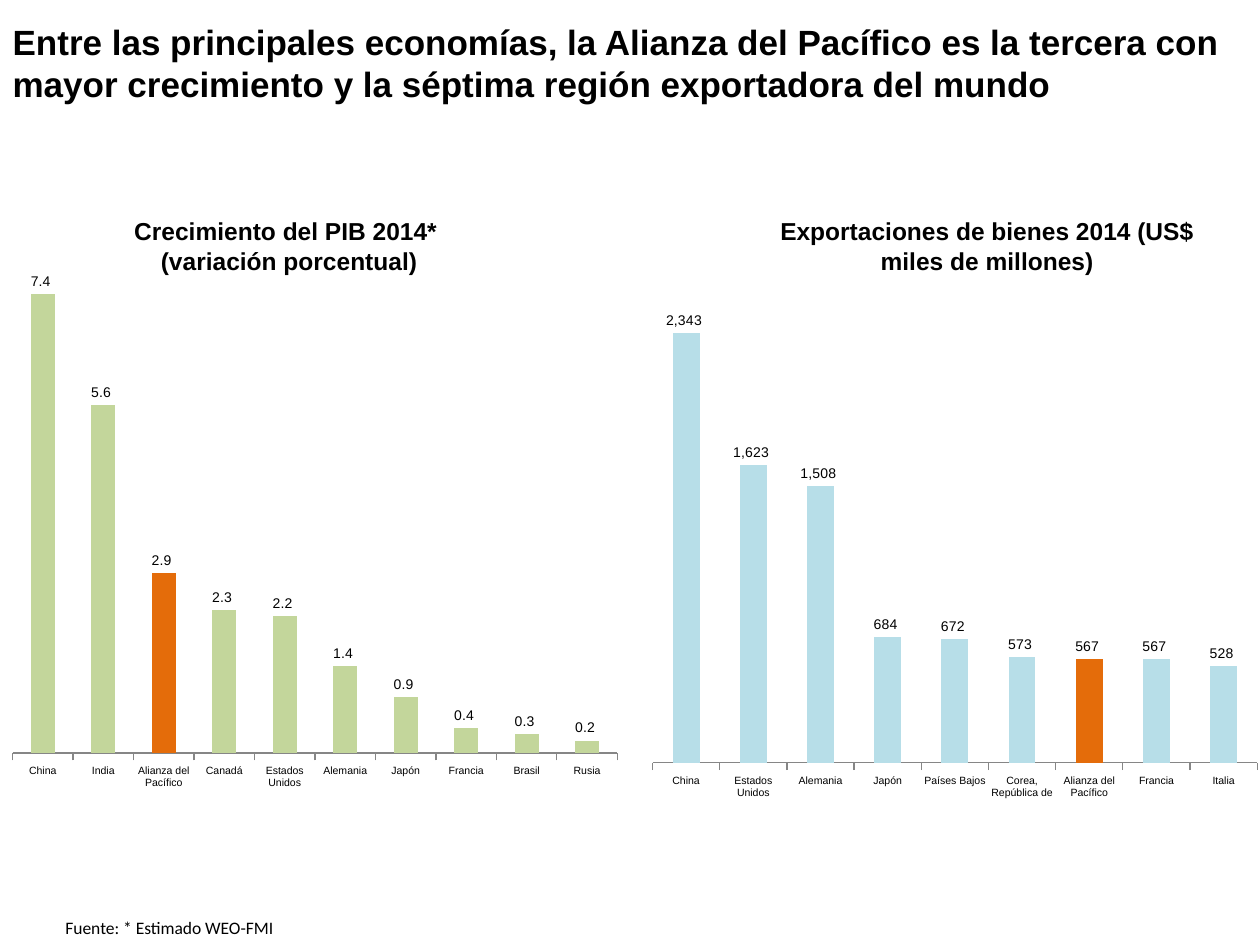
from dataclasses import dataclass

from pptx import Presentation
from pptx.chart.data import CategoryChartData
from pptx.dml.color import RGBColor
from pptx.enum.chart import XL_CHART_TYPE, XL_LABEL_POSITION, XL_TICK_LABEL_POSITION, XL_TICK_MARK
from pptx.enum.text import MSO_ANCHOR, MSO_AUTO_SIZE, PP_ALIGN
from pptx.util import Cm, Pt


@dataclass(frozen=True)
class Theme:
    font: str = "Arial"
    source_font: str = "Calibri"
    text: RGBColor = RGBColor(0x00, 0x00, 0x00)
    axis: RGBColor = RGBColor(0x86, 0x86, 0x86)
    growth: RGBColor = RGBColor(0xC3, 0xD6, 0x9B)
    exports: RGBColor = RGBColor(0xB7, 0xDE, 0xE8)
    highlight: RGBColor = RGBColor(0xE4, 0x6C, 0x0A)
    title_size: int = 20
    heading_size: int = 14
    source_size: int = 10
    label_size: int = 8
    category_size: int = 6


THEME = Theme()
HIGHLIGHTED = "Alianza del Pacífico"


@dataclass(frozen=True)
class Box:
    left: float
    top: float
    width: float
    height: float

    def lengths(self) -> tuple:
        return Cm(self.left), Cm(self.top), Cm(self.width), Cm(self.height)


@dataclass(frozen=True)
class Panel:
    heading: str
    heading_box: Box
    chart_box: Box
    values: dict[str, float]
    color: RGBColor
    number_format: str
    maximum: float


PANELS = (
    Panel(
        "Crecimiento del PIB 2014* \n(variación porcentual)",
        Box(0.84, 4.52, 9.98, 0.86),
        Box(0, 4.95, 12.7, 11.18),
        {"China": 7.4, "India": 5.6, HIGHLIGHTED: 2.9, "Canadá": 2.3,
         "Estados Unidos": 2.2, "Alemania": 1.4, "Japón": 0.9,
         "Francia": 0.4, "Brasil": 0.3, "Rusia": 0.2},
        THEME.growth, r"#,##0.0_);\(#,##0.0\)", 8,
    ),
    Panel(
        "Exportaciones de bienes 2014 (US$ miles de millones)",
        Box(14.91, 4.52, 9.98, 0.86),
        Box(12.9, 5.92, 12.7, 10.39),
        {"China": 2343, "Estados Unidos": 1623, "Alemania": 1508,
         "Japón": 684, "Países Bajos": 672, "Corea, República de": 573,
         HIGHLIGHTED: 567, "Francia": 567, "Italia": 528},
        THEME.exports, r"#,##0_);\(#,##0\)", 2500,
    ),
)


def write_text(shape, text: str, *, size: int, font: str = THEME.font, bold: bool = False,
               align=PP_ALIGN.LEFT, anchor=MSO_ANCHOR.TOP, wrap: bool = True,
               auto_size=MSO_AUTO_SIZE.NONE) -> None:
    frame = shape.text_frame
    frame.text = text
    frame.word_wrap = wrap
    frame.auto_size = auto_size
    frame.vertical_anchor = anchor
    for paragraph in frame.paragraphs:
        paragraph.alignment = align
        for run in paragraph.runs:
            run.font.name = font
            run.font.size = Pt(size)
            run.font.bold = bold
            run.font.color.rgb = THEME.text


def fill_solid(element, color: RGBColor) -> None:
    element.format.fill.solid()
    element.format.fill.fore_color.rgb = color


def add_column_chart(slide, panel: Panel) -> None:
    data = CategoryChartData(number_format=panel.number_format)
    data.categories = list(panel.values)
    data.add_series("Series 1", list(panel.values.values()))
    chart = slide.shapes.add_chart(
        XL_CHART_TYPE.COLUMN_CLUSTERED, *panel.chart_box.lengths(), data).chart
    chart.has_legend = False
    chart.has_title = False
    chart.font.name = THEME.font
    chart.font.size = Pt(18)
    chart.font.color.rgb = THEME.text

    value_axis = chart.value_axis
    value_axis.visible = False
    value_axis.has_major_gridlines = False
    value_axis.minimum_scale = 0
    value_axis.maximum_scale = panel.maximum

    category_axis = chart.category_axis
    category_axis.major_tick_mark = XL_TICK_MARK.OUTSIDE
    category_axis.tick_label_position = XL_TICK_LABEL_POSITION.LOW
    category_axis.tick_labels.font.size = Pt(THEME.category_size)
    category_axis.format.line.color.rgb = THEME.axis

    plot = chart.plots[0]
    plot.gap_width = 150
    plot.vary_by_categories = False
    series = plot.series[0]
    fill_solid(series, panel.color)
    fill_solid(series.points[list(panel.values).index(HIGHLIGHTED)], THEME.highlight)

    labels = series.data_labels
    labels.show_value = True
    labels.position = XL_LABEL_POSITION.OUTSIDE_END
    labels.number_format = panel.number_format
    labels.number_format_is_linked = False
    labels.font.size = Pt(THEME.label_size)


def main() -> None:
    presentation = Presentation()
    presentation.slide_width, presentation.slide_height = Cm(25.4), Cm(19.05)
    slide = presentation.slides.add_slide(presentation.slide_layouts[5])

    title = slide.shapes.title
    title.left, title.top, title.width, title.height = Box(0, 0, 25.4, 2.51).lengths()
    write_text(
        title,
        "Entre las principales economías, la Alianza del Pacífico es la tercera con "
        "mayor crecimiento y la séptima región exportadora del mundo",
        size=THEME.title_size, bold=True, anchor=MSO_ANCHOR.MIDDLE)

    source = slide.shapes.add_textbox(*Box(1.07, 18.36, 4.78, 0.69).lengths())
    write_text(source, "Fuente: * Estimado WEO-FMI", size=THEME.source_size,
               font=THEME.source_font, wrap=False,
               auto_size=MSO_AUTO_SIZE.SHAPE_TO_FIT_TEXT)

    for panel in PANELS:
        heading = slide.shapes.add_textbox(*panel.heading_box.lengths())
        write_text(heading, panel.heading, size=THEME.heading_size, bold=True,
                   align=PP_ALIGN.CENTER, anchor=MSO_ANCHOR.MIDDLE)
    for panel in PANELS:
        add_column_chart(slide, panel)

    presentation.save("out.pptx")


if __name__ == "__main__":
    main()
